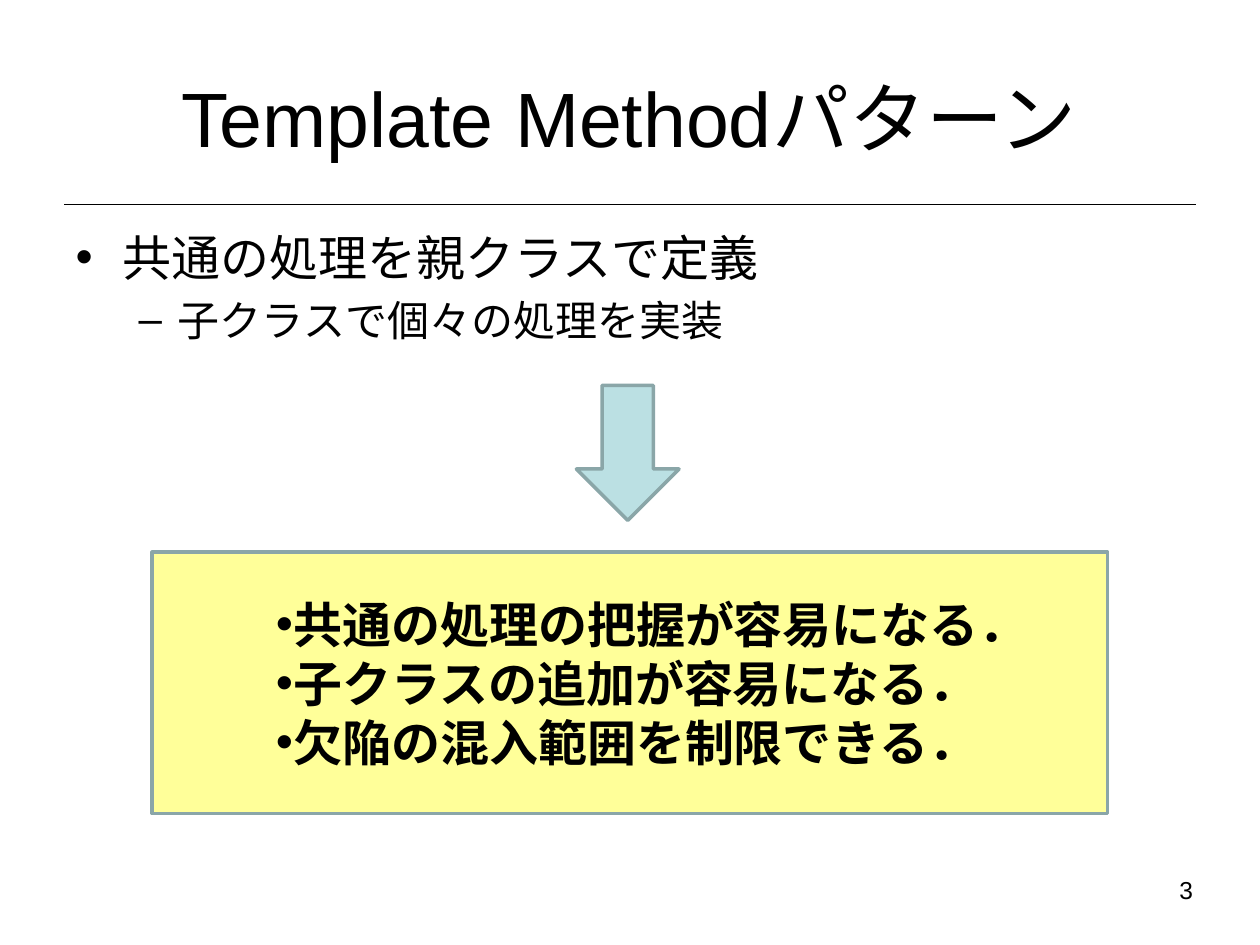
from dataclasses import dataclass

from lxml.etree import SubElement
from pptx import Presentation
from pptx.dml.color import RGBColor
from pptx.enum.shapes import MSO_CONNECTOR, MSO_SHAPE
from pptx.enum.text import MSO_ANCHOR, MSO_AUTO_SIZE, PP_ALIGN
from pptx.oxml.ns import qn
from pptx.util import Cm, Pt


@dataclass(frozen=True)
class Theme:
    font: str = "Arial"
    ink: str = "000000"
    arrow: str = "BBE0E3"
    panel: str = "FFFF99"
    edge: str = "8AA6A8"
    title: int = 44
    body: int = 28
    sub: int = 24
    number: int = 14


class Deck:
    """Holds the theme and the current slide, and draws each kind of element."""

    def __init__(self, theme):
        self.theme = theme
        self.prs = Presentation()
        self.prs.slide_width, self.prs.slide_height = Cm(25.4), Cm(19.05)
        self.s = self.prs.slides.add_slide(self.prs.slide_layouts[1])

    def place(self, sp, box):
        sp.left, sp.top, sp.width, sp.height = (Cm(v) for v in box)

    def style(self, p, size, bold=False):
        for r in p.runs:
            r.font.name = self.theme.font
            r.font.size = Pt(size)
            r.font.bold = bold
            r.font.color.rgb = RGBColor.from_string(self.theme.ink)

    def title(self, text, box):
        sp = self.s.shapes.title
        self.place(sp, box)
        tf = sp.text_frame
        tf.text = text
        tf.auto_size = MSO_AUTO_SIZE.NONE
        tf.vertical_anchor = MSO_ANCHOR.MIDDLE
        self.style(tf.paragraphs[0], self.theme.title)

    def body(self, items, box):
        sp = self.s.placeholders[1]
        self.place(sp, box)
        tf = sp.text_frame
        tf.text = "\n".join(text for text, _ in items)
        tf.auto_size = MSO_AUTO_SIZE.NONE
        for p, (_, level) in zip(tf.paragraphs, items):
            p.level = level
            self.style(p, (self.theme.body, self.theme.sub)[level])

    def rule(self, left, right, y):
        ln = self.s.shapes.add_connector(
            MSO_CONNECTOR.STRAIGHT, Cm(left), Cm(y), Cm(right), Cm(y))
        ln.line.color.rgb = RGBColor.from_string(self.theme.ink)
        ln.line.width = Pt(0.75)
        SubElement(ln._element.spPr, qn("a:effectLst"))

    def shape(self, kind, box, fill):
        sp = self.s.shapes.add_shape(kind, *(Cm(v) for v in box))
        sp.shadow.inherit = False
        sp.fill.solid()
        sp.fill.fore_color.rgb = RGBColor.from_string(fill)
        sp.line.color.rgb = RGBColor.from_string(self.theme.edge)
        sp.line.width = Pt(2)
        return sp

    def panel(self, items, box, indent, hang):
        tf = self.shape(MSO_SHAPE.RECTANGLE, box, self.theme.panel).text_frame
        tf.vertical_anchor = MSO_ANCHOR.MIDDLE
        tf.text = "\n".join(items)
        for p in tf.paragraphs:
            p.alignment = PP_ALIGN.LEFT
            pPr = p._p.get_or_add_pPr()
            pPr.set("marL", str(Cm(indent)))
            pPr.set("indent", str(-Cm(hang)))
            SubElement(pPr, qn("a:buFont"), typeface=self.theme.font)
            SubElement(pPr, qn("a:buChar"), char="•")
            self.style(p, self.theme.body, bold=True)

    def number(self, text, box):
        tf = self.s.shapes.add_textbox(*(Cm(v) for v in box)).text_frame
        tf.word_wrap = True
        tf.text = text
        p = tf.paragraphs[0]
        p.alignment = PP_ALIGN.RIGHT
        self.style(p, self.theme.number)


def main():
    theme = Theme()
    deck = Deck(theme)
    deck.rule(1.3, 24.1, 4.12)
    deck.title("Template Methodパターン", (1.27, 0.76, 22.83, 3.18))
    deck.body([("共通の処理を親クラスで定義", 0), ("子クラスで個々の処理を実装", 1)],
              (1.27, 4.45, 22.86, 12.57))
    deck.number("3", (21.1, 17.52, 3.2, 0.82))
    deck.shape(MSO_SHAPE.DOWN_ARROW, (11.62, 7.77, 2.07, 2.72), theme.arrow)
    deck.panel(["共通の処理の把握が容易になる．",
                "子クラスの追加が容易になる．",
                "欠陥の混入範囲を制限できる．"],
               (3.07, 11.13, 19.26, 5.27), indent=2.6, hang=0.36)
    deck.prs.save("out.pptx")


if __name__ == "__main__":
    main()
